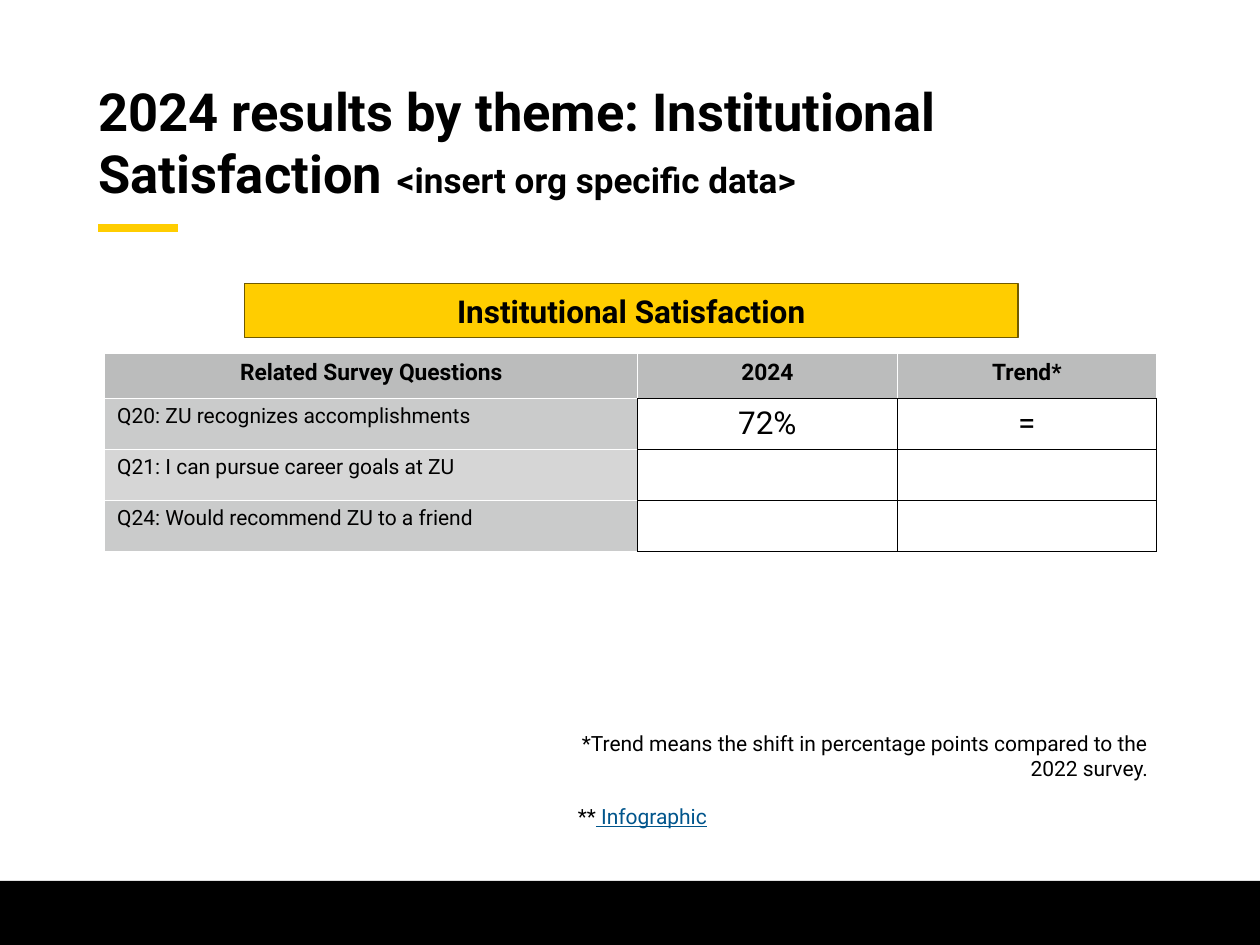
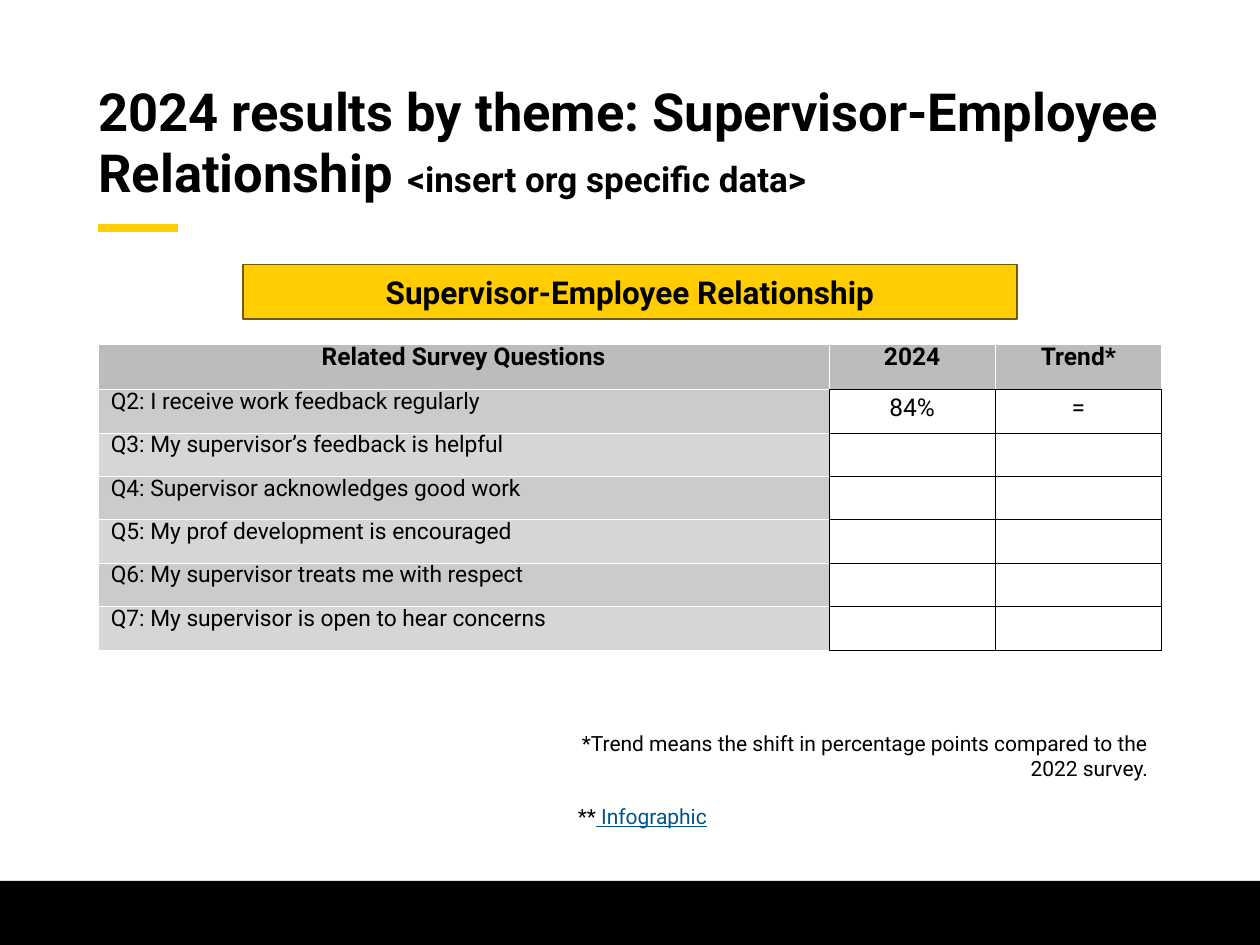
from lxml import etree
from pptx import Presentation
from pptx.dml.color import RGBColor
from pptx.enum.shapes import MSO_CONNECTOR, MSO_SHAPE
from pptx.enum.text import MSO_ANCHOR, MSO_AUTO_SIZE, PP_ALIGN
from pptx.oxml import parse_xml
from pptx.oxml.ns import nsdecls, qn
from pptx.util import Inches, Pt

LEFT, CENTER, RIGHT = PP_ALIGN.LEFT, PP_ALIGN.CENTER, PP_ALIGN.RIGHT
TOP, MIDDLE = MSO_ANCHOR.TOP, MSO_ANCHOR.MIDDLE
FIT_TEXT, NO_FIT = MSO_AUTO_SIZE.SHAPE_TO_FIT_TEXT, MSO_AUTO_SIZE.NONE
RECT, STRAIGHT = MSO_SHAPE.RECTANGLE, MSO_CONNECTOR.STRAIGHT

FONT = "Roboto"
BLACK, WHITE, GOLD, BROWN, BLUE = "000000", "FFFFFF", "FFCD00", "705A00", "00558C"
HEADER_GRAY, STRIPES = "BBBCBC", ("CACBCB", "D6D6D6")
HEADERS = ("Related Survey Questions", "2024", "Trend*")

INSTITUTION = dict(
    theme="Institutional Satisfaction",
    title_box=(0.78, 0.43, 8.44, 1.46),
    banner_box=(1.94, 2.25, 6.14, 0.43),
    table_box=(0.83, 2.8, 8.35, 1.57),
    value_width=2.06, header_height=0.36,
    sizes=(13, 12, 18), spacings=(None, None, None), margin=0.05,
    rows=[("Q20: ZU recognizes accomplishments", "72%", "="),
          ("Q21: I can pursue career goals at ZU", "", ""),
          ("Q24: Would recommend ZU to a friend", "", "")])

SUPERVISOR = dict(
    theme="Supervisor-Employee Relationship",
    title_box=(0.78, 0.43, 8.67, 1.45),
    banner_box=(1.93, 2.1, 6.14, 0.43),
    table_box=(0.78, 2.73, 8.44, 2.43),
    value_width=1.32, header_height=0.36,
    sizes=(14, 13, 14), spacings=(12.9, 11.6, 13.6), margin=0.04,
    rows=[("Q2: I receive work feedback regularly", "84%", "="),
          ("Q3: My supervisor’s feedback is helpful", "", ""),
          ("Q4: Supervisor acknowledges good work", "", ""),
          ("Q5: My prof development is encouraged", "", ""),
          ("Q6: My supervisor treats me with respect", "", ""),
          ("Q7: My supervisor is open to hear concerns", "", "")])


def rgb(color):
    return RGBColor.from_string(color)


def inches(box):
    return [Inches(v) for v in box]


def add_run(p, text, size, bold=False, color=BLACK, underline=None):
    r = p.add_run()
    r.text = text
    r.font.name, r.font.size, r.font.bold = FONT, Pt(size), bold
    r.font.color.rgb = rgb(color)
    r.font.underline = underline


def add_rect(slide, box, fill, line=None):
    sp = slide.shapes.add_shape(RECT, *inches(box))
    sp.shadow.inherit = False
    sp.fill.solid()
    sp.fill.fore_color.rgb = rgb(fill)
    if line:
        sp.line.color.rgb = rgb(line)
        sp.line.width = Pt(1)
    else:
        sp.line.fill.background()
    return sp


def add_frame(slide):
    """Gold rule under the title and black band at the foot."""
    rule = slide.shapes.add_connector(STRAIGHT, *inches((0.78, 1.81, 1.41, 1.81)))
    rule.line.color.rgb = rgb(GOLD)
    rule.line.width = Pt(5)
    etree.SubElement(rule._element.spPr, qn("a:effectLst"))
    add_rect(slide, (0, 6.99, 10, 0.51), BLACK)


def add_title(slide, box, theme):
    title = slide.shapes.title
    title.left, title.top, title.width, title.height = inches(box)
    tf = title.text_frame
    tf.word_wrap, tf.auto_size, tf.vertical_anchor = True, NO_FIT, MIDDLE
    tf.margin_left = tf.margin_top = tf.margin_right = tf.margin_bottom = 0
    p = tf.paragraphs[0]
    p.alignment, p.line_spacing = LEFT, 0.9
    add_run(p, f"2024 results by theme: {theme}", 30, bold=True)
    add_run(p, " ", 33, bold=True)
    add_run(p, "<insert org specific data>", 20, bold=True)


def add_banner(slide, box, theme):
    tf = add_rect(slide, box, GOLD, BROWN).text_frame
    tf.word_wrap, tf.vertical_anchor = True, MIDDLE
    p = tf.paragraphs[0]
    p.alignment = CENTER
    add_run(p, theme, 18, bold=True)


def set_borders(cell, **colors):
    tcPr = cell._tc.get_or_add_tcPr()
    for side in "LRTB":
        tcPr.append(parse_xml(
            f'<a:ln{side} {nsdecls("a")} w="{Pt(0.25)}"><a:solidFill>'
            f'<a:srgbClr val="{colors[side]}"/></a:solidFill></a:ln{side}>'))


def cell_look(row, col):
    """Kind (0 header, 1 question, 2 value), fill and border colours."""
    white = dict.fromkeys("LRTB", WHITE)
    if row == 0:
        return 0, HEADER_GRAY, white | {"B": BLACK if col else WHITE}
    if col == 0:
        return 1, STRIPES[(row - 1) % 2], white | {"R": BLACK}
    return 2, WHITE, dict.fromkeys("LRTB", BLACK)


def fill_cell(cell, text, row, col, sizes, spacings, margin):
    kind, fill, borders = cell_look(row, col)
    set_borders(cell, **borders)
    cell.fill.solid()
    cell.fill.fore_color.rgb = rgb(fill)
    cell.margin_top = cell.margin_bottom = Inches(margin)
    cell.vertical_anchor = MIDDLE if kind == 2 else TOP
    p = cell.text_frame.paragraphs[0]
    p.alignment = LEFT if kind == 1 else CENTER
    if spacings[kind]:
        p.line_spacing = Pt(spacings[kind])
    if text:
        add_run(p, text, sizes[kind], bold=kind == 0)
    else:
        etree.SubElement(p._p, qn("a:endParaRPr"), sz=str(sizes[kind] * 100))


def add_results_table(slide, box, rows, value_width, header_height, **cell_style):
    width, height = box[2:]
    records = [HEADERS, *rows]
    table = slide.shapes.add_table(len(records), len(HEADERS), *inches(box)).table
    widths = (width - 2 * value_width, value_width, value_width)
    for column, w in zip(table.columns, widths):
        column.width = Inches(w)
    row_height = (height - header_height) / len(rows)
    for i, record in enumerate(records):
        table.rows[i].height = Inches(row_height if i else header_height)
        for j, text in enumerate(record):
            fill_cell(table.cell(i, j), text, i, j, **cell_style)


def add_note(slide, box):
    tf = slide.shapes.add_textbox(*inches(box)).text_frame
    tf.word_wrap, tf.auto_size = True, FIT_TEXT
    p = tf.paragraphs[0]
    p.alignment = RIGHT
    return p


def add_notes(slide):
    p = add_note(slide, (4.14, 5.75, 5.07, 0.71))
    add_run(p, "*Trend means the shift in percentage points compared to the 2022 survey.", 12)
    p = add_note(slide, (4.45, 6.33, 1.26, 0.5))
    add_run(p, "**", 12)
    add_run(p, " Infographic", 12, color=BLUE, underline=True)


def add_theme_slide(prs, theme, title_box, banner_box, table_box, **table_style):
    slide = prs.slides.add_slide(prs.slide_layouts.get_by_name("Title Only"))
    add_frame(slide)
    add_title(slide, title_box, theme)
    add_results_table(slide, table_box, **table_style)
    add_banner(slide, banner_box, theme)
    add_notes(slide)


def main():
    prs = Presentation()
    prs.slide_width, prs.slide_height = Inches(10), Inches(7.5)
    for theme_results in (INSTITUTION, SUPERVISOR):
        add_theme_slide(prs, **theme_results)
    prs.save("out.pptx")


if __name__ == "__main__":
    main()
